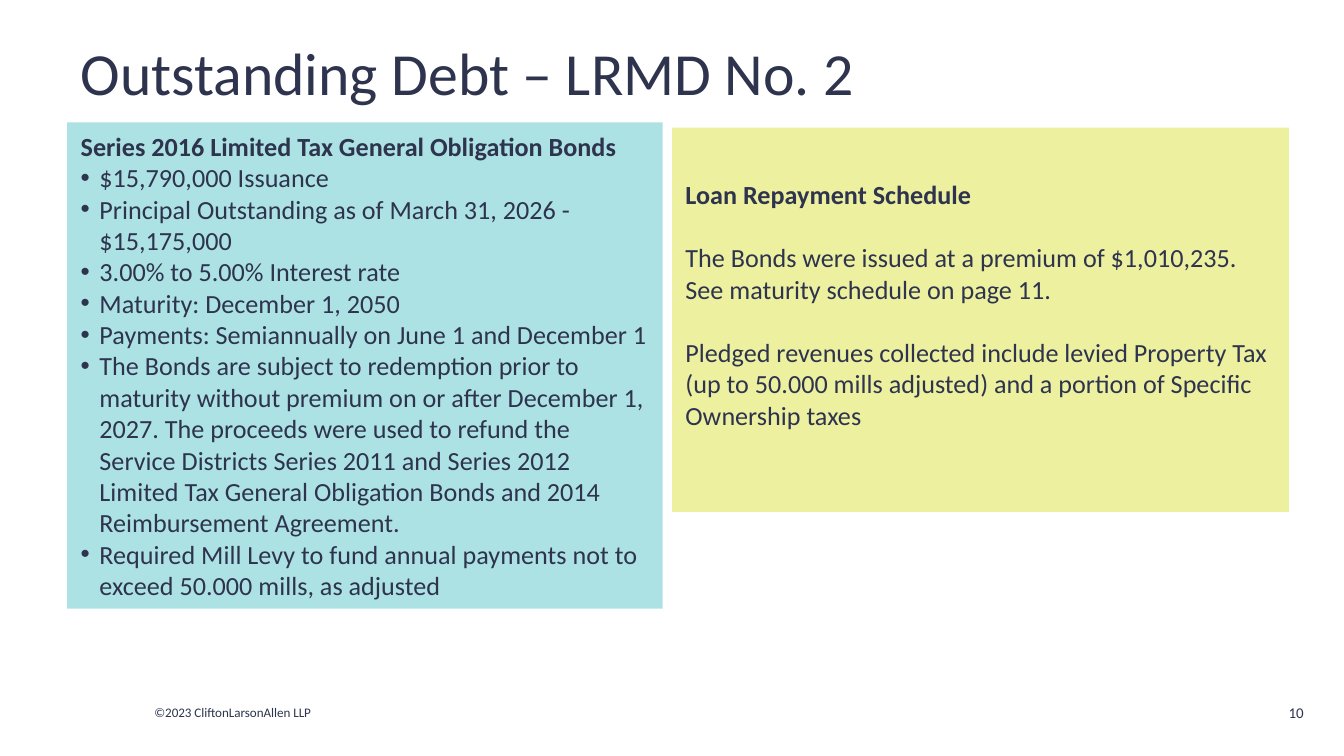
"""Build the outstanding debt slide with two tinted text panels."""

from dataclasses import dataclass

from lxml import etree
from pptx import Presentation
from pptx.dml.color import RGBColor
from pptx.enum.text import MSO_ANCHOR, MSO_AUTO_SIZE, PP_ALIGN
from pptx.oxml.ns import qn
from pptx.util import Inches, Pt

LEFT, RIGHT = PP_ALIGN.LEFT, PP_ALIGN.RIGHT
MIDDLE = MSO_ANCHOR.MIDDLE
NO_AUTOFIT = MSO_AUTO_SIZE.NONE

SLIDE_WIDTH = Inches(10)
SLIDE_HEIGHT = SLIDE_WIDTH * 9 // 16
TWO_CONTENT_LAYOUT = 3
FONT = "Calibri"
INK = "2E334E"
TEAL = "7DD2D3"
YELLOW = "E2E868"
PANEL_OPACITY = 63
BULLET_INDENT = 0.14
BODY_SIZE = 14


@dataclass(frozen=True)
class Line:
    text: str
    size: float = BODY_SIZE
    bold: bool = False
    bullet: bool = False
    space_before: float = 0
    alignment: PP_ALIGN = LEFT


@dataclass(frozen=True)
class Box:
    left: float
    top: float
    width: float
    height: float
    lines: list[Line]
    bottom_margin: float = 0.05


@dataclass(frozen=True)
class Panel:
    box: Box
    fill: str


TITLE = Box(0.5, 0.16, 9, 0.75, [Line("Outstanding Debt – LRMD No. 2", 32)])

BOND_TERMS = [
    "$15,790,000 Issuance",
    "Principal Outstanding as of March 31, 2026 - $15,175,000",
    "3.00% to 5.00% Interest rate",
    "Maturity: December 1, 2050",
    "Payments: Semiannually on June 1 and December 1",
    "The Bonds are subject to redemption prior to maturity without premium "
    "on or after December 1, 2027. The proceeds were used to refund the "
    "Service Districts Series 2011 and Series 2012 Limited Tax General "
    "Obligation Bonds and 2014 Reimbursement Agreement.",
    "Required Mill Levy to fund annual payments not to exceed 50.000 mills, "
    "as adjusted",
]

REPAYMENT_NOTES = [
    "The Bonds were issued at a premium of $1,010,235. "
    "See maturity schedule on page 11.",
    "Pledged revenues collected include levied Property Tax (up to 50.000 "
    "mills adjusted) and a portion of Specific Ownership taxes",
]

PANELS = [
    Panel(
        Box(0.5, 0.91, 4.43, 3.62, [
            Line("Series 2016 Limited Tax General Obligation Bonds", bold=True),
            *(Line(term, bullet=True) for term in BOND_TERMS),
        ]),
        TEAL,
    ),
    Panel(
        Box(5, 0.95, 4.59, 2.86, [
            Line("Loan Repayment Schedule", bold=True),
            *(Line(note, space_before=17) for note in REPAYMENT_NOTES),
        ], bottom_margin=0.28),
        YELLOW,
    ),
]

FOOTERS = [
    Box(1.05, 5.19, 1.51, 0.22, [Line("©2023 CliftonLarsonAllen LLP", 7)]),
    Box(9.37, 5.11, 0.43, 0.38, [Line("10", 8, alignment=RIGHT)]),
]


def color(value: str) -> RGBColor:
    """Turn a hex string into a colour."""
    return RGBColor.from_string(value)


def apply_format(target, values: dict) -> None:
    """Set every named attribute on the target."""
    for name, value in values.items():
        setattr(target, name, value)


def set_bullet(paragraph, bullet: bool) -> None:
    """Give the paragraph a hanging bullet, or remove the inherited one."""
    properties = paragraph._p.get_or_add_pPr()
    indent = Inches(BULLET_INDENT) if bullet else 0
    properties.set("marL", str(indent))
    properties.set("indent", str(-indent))
    if bullet:
        etree.SubElement(properties, qn("a:buFont"), typeface="Arial")
        etree.SubElement(properties, qn("a:buChar"), char="•")
    else:
        etree.SubElement(properties, qn("a:buNone"))


def write_line(paragraph, line: Line) -> None:
    """Write one formatted line into a paragraph."""
    set_bullet(paragraph, line.bullet)
    apply_format(paragraph, {
        "alignment": line.alignment,
        "space_before": Pt(line.space_before),
        "space_after": Pt(0),
    })
    run = paragraph.add_run()
    run.text = line.text
    apply_format(run.font, {
        "name": FONT, "size": Pt(line.size), "bold": line.bold,
    })
    run.font.color.rgb = color(INK)


def fill_box(shape, box: Box) -> None:
    """Place a shape and write its lines."""
    apply_format(shape, {
        name: Inches(getattr(box, name))
        for name in ("left", "top", "width", "height")
    })
    frame = shape.text_frame
    apply_format(frame, {
        "word_wrap": True,
        "auto_size": NO_AUTOFIT,
        "vertical_anchor": MIDDLE,
        "margin_bottom": Inches(box.bottom_margin),
    })
    for index, line in enumerate(box.lines):
        paragraph = frame.add_paragraph() if index else frame.paragraphs[0]
        write_line(paragraph, line)


def draw_panel(shape, panel: Panel) -> None:
    """Tint a body placeholder and fill in its text."""
    shape.fill.solid()
    shape.fill.fore_color.rgb = color(panel.fill)
    tint = next(shape.element.iter(qn("a:srgbClr")))
    etree.SubElement(tint, qn("a:alpha"), val=str(PANEL_OPACITY * 1000))
    fill_box(shape, panel.box)


def main() -> None:
    """Build and save the slide."""
    presentation = Presentation()
    apply_format(presentation, {
        "slide_width": SLIDE_WIDTH, "slide_height": SLIDE_HEIGHT,
    })
    layout = presentation.slide_layouts[TWO_CONTENT_LAYOUT]
    slide = presentation.slides.add_slide(layout)
    title, *bodies = slide.placeholders
    fill_box(title, TITLE)
    for body, panel in zip(bodies, PANELS):
        draw_panel(body, panel)
    for footer in FOOTERS:
        fill_box(slide.shapes.add_textbox(0, 0, 0, 0), footer)
    presentation.save("out.pptx")


if __name__ == "__main__":
    main()
